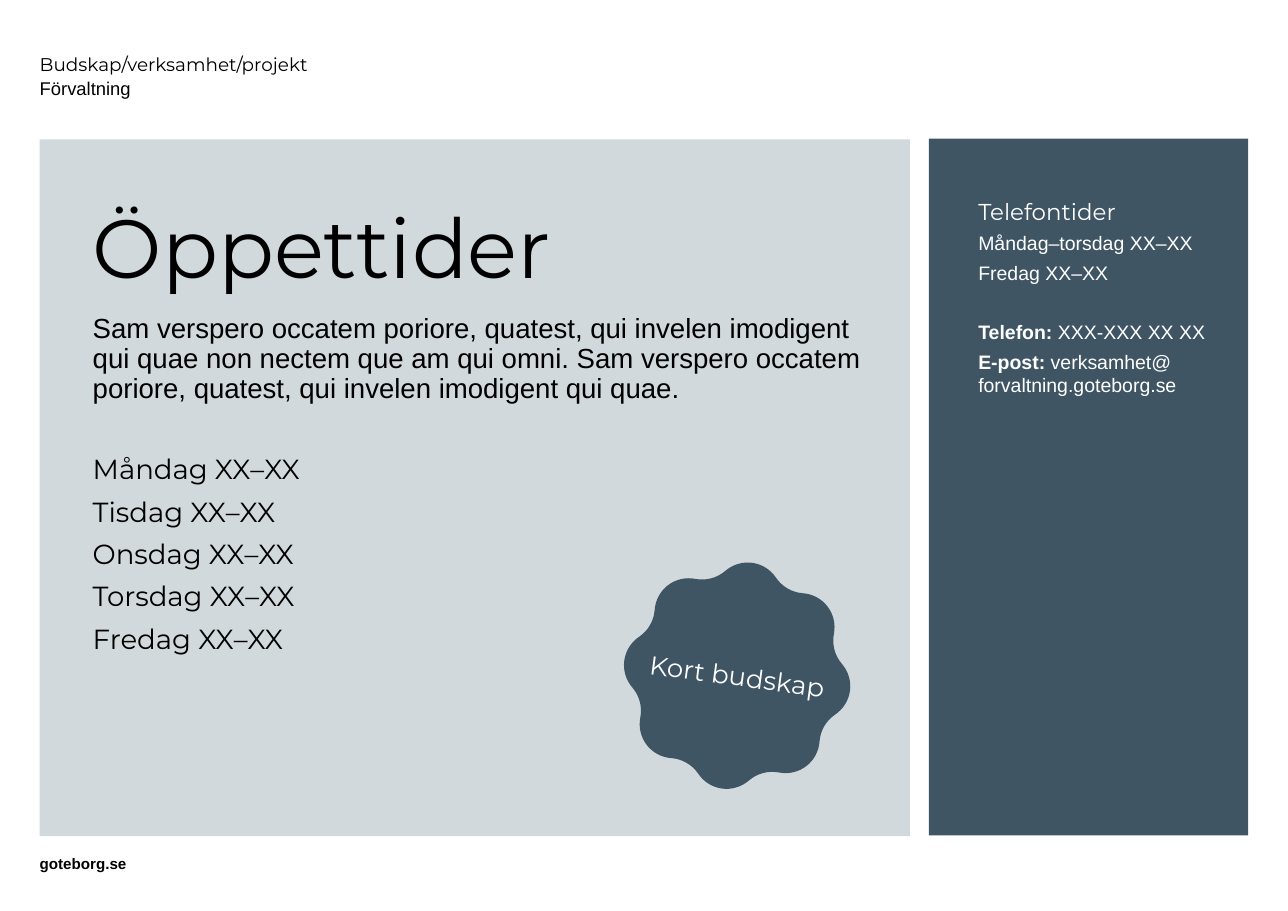
import math

import lxml.etree
import pptx
import pptx.dml.color
import pptx.enum.shapes
import pptx.enum.text
import pptx.oxml.ns
import pptx.util

BLACK = pptx.dml.color.RGBColor(0x00, 0x00, 0x00)
WHITE = pptx.dml.color.RGBColor(0xFF, 0xFF, 0xFF)
SLATE = pptx.dml.color.RGBColor(0x3F, 0x55, 0x64)
MIST = pptx.dml.color.RGBColor(0xD1, 0xD9, 0xDC)
HEAD, BODY = "Montserrat", "Arial"
TOP = pptx.enum.text.MSO_ANCHOR.TOP
MIDDLE = pptx.enum.text.MSO_ANCHOR.MIDDLE
MARGIN, INDENT, TEXT_WIDTH = 3.08, 7.2, 61.58
PANEL_HEIGHT, TEXT_TOP = 76.48, 21.98


class Poster:
    """Draws styled elements on one slide, placed in percent of its width and height."""

    def __init__(self, prs):
        self.width, self.height = prs.slide_width, prs.slide_height
        self.s = prs.slides.add_slide(prs.slide_layouts[6])

    def place(self, x, y, w, h):
        return [round(v * full / 100) for v, full in
                ((x, self.width), (y, self.height), (w, self.width), (h, self.height))]

    def paint(self, sp, color):
        sp.shadow.inherit = False
        sp.fill.solid()
        sp.fill.fore_color.rgb = color
        sp.line.fill.background()

    def panel(self, box, color):
        sp = self.s.shapes.add_shape(pptx.enum.shapes.MSO_SHAPE.RECTANGLE, *self.place(*box))
        self.paint(sp, color)

    def format(self, r, font, size, color, bold=False):
        r.font.name, r.font.size, r.font.bold = font, pptx.util.Pt(size), bold
        r.font.color.rgb = color

    def text(self, box, lines, color=BLACK, anchor=TOP, spacing=0.9, before=0, bold=False):
        tf = self.s.shapes.add_textbox(*self.place(*box)).text_frame
        tf.word_wrap, tf.vertical_anchor = True, anchor
        tf.margin_left = tf.margin_top = tf.margin_right = tf.margin_bottom = 0
        for i, (text, font, size) in enumerate(lines):
            p = tf.add_paragraph() if i else tf.paragraphs[0]
            p.text = text
            p.line_spacing = spacing
            p.space_before = pptx.util.Pt(before if i else 0)
            for r in p.runs:
                self.format(r, font, size, color, bold)
        return tf

    def contact(self, tf, label, value, size, color, before):
        p = tf.add_paragraph()
        p.text = label
        p.line_spacing, p.space_before = 1.0, pptx.util.Pt(before)
        self.format(p.runs[0], BODY, size, color, True)
        for i, line in enumerate(value.split("\n")):
            if i:
                p.add_line_break()
            r = p.add_run()
            r.text = line
            self.format(r, BODY, size, color)

    def rosette(self, x, y, radius, lobes=8):
        cx, cy, _, _ = self.place(x, y, 0, 0)
        full = pptx.util.Inches(radius)
        corners = [(cx + full, cy), (cx, cy + full), (cx - full, cy), (cx, cy - full)]
        builder = self.s.shapes.build_freeform(*corners[0])
        builder.add_line_segments(corners[1:], close=True)
        sp = builder.convert_to_shape()
        outline = sp.element.find(".//" + pptx.oxml.ns.qn("a:path"))
        for segment in list(outline):
            outline.remove(segment)

        def draw(tag, *polar):
            segment = lxml.etree.SubElement(outline, pptx.oxml.ns.qn(tag))
            for distance, degrees in polar:
                reach, angle = pptx.util.Inches(distance), math.radians(degrees)
                lxml.etree.SubElement(segment, pptx.oxml.ns.qn("a:pt"),
                                      x=str(round(full + reach * math.cos(angle))),
                                      y=str(round(full + reach * math.sin(angle))))

        draw("a:moveTo", (1.35, -14.25))
        for lobe in range(lobes):
            turn = lobe * 360 / lobes
            draw("a:cubicBezTo", (1.52, turn - 5.8), (1.52, turn + 5.8), (1.35, turn + 14.25))
            draw("a:cubicBezTo", (1.28, turn + 19.3), (1.28, turn + 25.7), (1.35, turn + 30.75))
        draw("a:close")
        return sp

    def badge(self, x, y, text, size, rotation):
        sp = self.rosette(x, y, 1.46)
        self.paint(sp, SLATE)
        sp.rotation = rotation
        tf = sp.text_frame
        tf.word_wrap, tf.vertical_anchor = True, MIDDLE
        tf.margin_left = tf.margin_right = pptx.util.Inches(0.28)
        tf.margin_top = tf.margin_bottom = pptx.util.Inches(0.08)
        tf.text = text
        p = tf.paragraphs[0]
        p.alignment = pptx.enum.text.PP_ALIGN.CENTER
        self.format(p.runs[0], HEAD, size, WHITE)


def main():
    prs = pptx.Presentation()
    prs.slide_width = pptx.util.Inches(16.53)
    prs.slide_height = pptx.util.Inches(11.69)
    poster = Poster(prs)

    poster.panel((72.11, 15.23, 24.8, PANEL_HEIGHT), SLATE)
    poster.panel((MARGIN, 15.31, 67.57, PANEL_HEIGHT), MIST)

    poster.text((INDENT, TEXT_TOP, TEXT_WIDTH, 11.29), [("Öppettider", HEAD, 76.3)], anchor=MIDDLE)
    days = ("Måndag", "Tisdag", "Onsdag", "Torsdag", "Fredag")
    poster.text((INDENT, 50.04, TEXT_WIDTH, 37.13),
                [(f"{day} XX–XX", HEAD, 25.45) for day in days], before=11.7)
    intro = ("Sam verspero occatem poriore, quatest, qui invelen imodigent qui quae non nectem "
             "que am qui omni. Sam verspero occatem poriore, quatest, qui invelen imodigent qui quae.")
    poster.text((INDENT, 34.56, TEXT_WIDTH, 11.98), [(intro, BODY, 25.45)])

    tf = poster.text((75.95, TEXT_TOP, 17.79, 65.1),
                     [("Telefontider", HEAD, 21.2), ("Måndag–torsdag XX–XX", BODY, 18),
                      ("Fredag XX–XX", BODY, 18)], color=WHITE, spacing=1.0, before=5.8)
    tf.paragraphs[0].line_spacing = 0.9
    for label, value, before in (("Telefon: ", "XXX-XXX XX XX", 33),
                                 ("E-post: ", "verksamhet@\nforvaltning.goteborg.se", 5.8)):
        poster.contact(tf, label, value, 18, WHITE, before)

    poster.badge(57.23, 74.17, "Kort budskap", 24, 7.6)
    poster.text((MARGIN, 6.24, 47.19, 4.11),
                [("Budskap/verksamhet/projekt", HEAD, 17), ("Förvaltning", BODY, 17)],
                anchor=MIDDLE, spacing=pptx.util.Pt(22))
    poster.text((MARGIN, 93.76, 44.34, 2.05), [("goteborg.se", BODY, 14)],
                anchor=MIDDLE, spacing=1.0, bold=True)
    prs.save("out.pptx")


if __name__ == "__main__":
    main()
